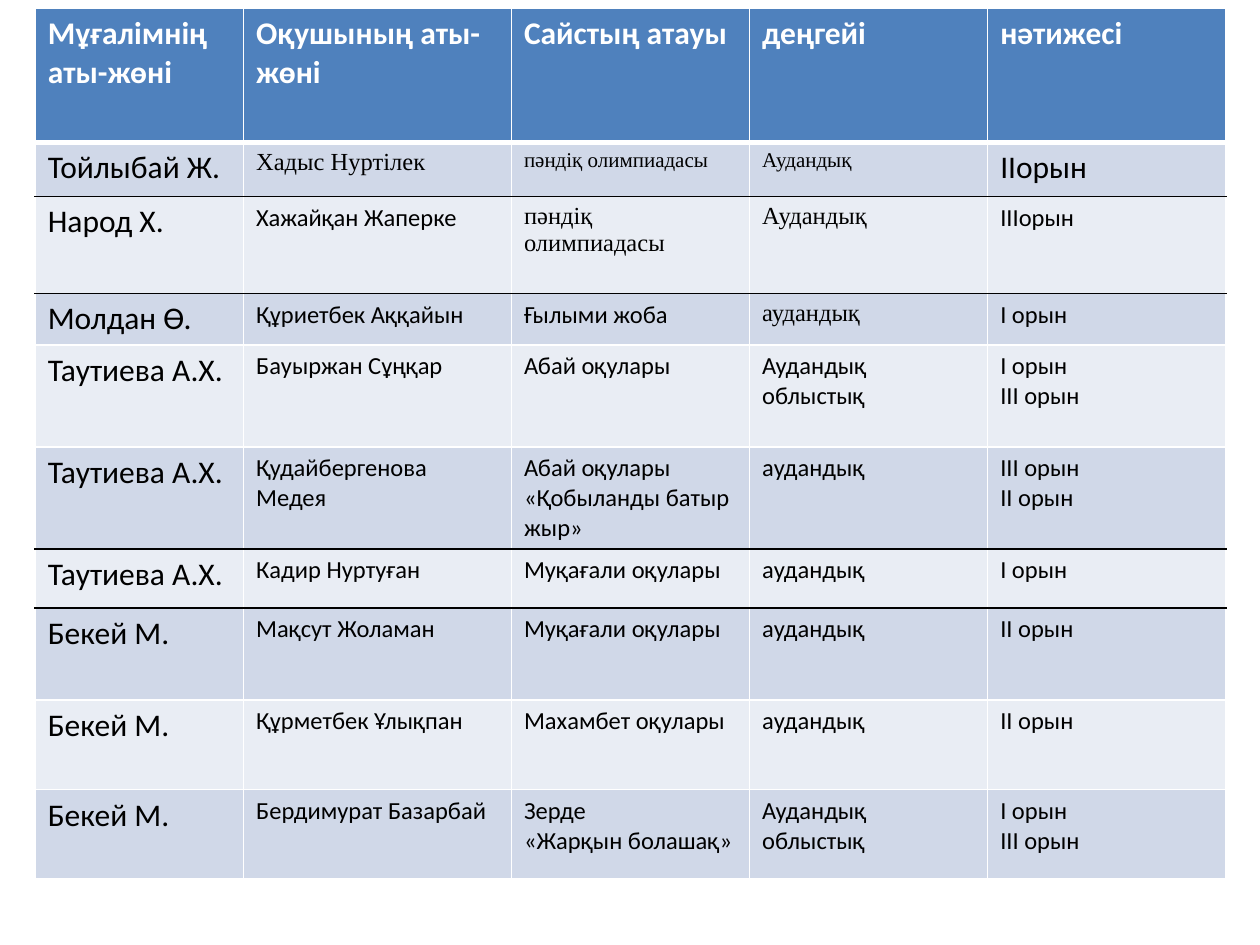
from lxml import etree
from pptx import Presentation
from pptx.dml.color import RGBColor
from pptx.oxml.ns import qn
from pptx.util import Cm, Pt

COLORS = {
    "header": "4F81BD",
    "odd": "D0D8E8",
    "even": "E9EDF4",
    "white": "FFFFFF",
    "black": "000000",
}
SANS, SERIF = "Calibri", "Times New Roman"
BLANK_LAYOUT = 6

COLUMN_WIDTHS = [4.2, 5.4, 4.8, 4.8, 4.8]
ROW_HEIGHTS = [2.7, 1.09, 1.96, 1.03, 2.06, 2.06, 1.19, 1.85, 1.81, 1.79]
ROWS = [
    ["Мұғалімнің аты-жөні", "Оқушының аты-жөні", "Сайстың атауы", "деңгейі", "нәтижесі"],
    ["Тойлыбай Ж.", "Хадыс Нуртілек", "пәндіқ олимпиадасы", "Аудандық", "ІІорын"],
    ["Народ Х.", "Хажайқан Жаперке", "пәндіқ олимпиадасы", "Аудандық", "ІІІорын"],
    ["Молдан Ө.", "Құриетбек Аққайын", "Ғылыми жоба", "аудандық", "І орын"],
    ["Таутиева А.Х.", "Бауыржан Сұңқар", "Абай оқулары", "Аудандық\nоблыстық", "І орын\nІІІ орын"],
    ["Таутиева А.Х.", "Қудайбергенова Медея", "Абай оқулары\n«Қобыланды батыр жыр»", "аудандық",
     "ІІІ орын\nІІ орын"],
    ["Таутиева А.Х.", "Кадир Нуртуған", "Муқағали оқулары", "аудандық", "І орын"],
    ["Бекей М.", "Мақсут Жоламан", "Муқағали оқулары", "аудандық", "ІІ орын"],
    ["Бекей М.", "Құрметбек Ұлықпан", "Махамбет оқулары", "аудандық", "ІІ орын"],
    ["Бекей М.", "Бердимурат Базарбай", "Зерде\n«Жарқын болашақ»", "Аудандық\nоблыстық",
     "І орын\nІІІ орын"],
]
SPECIAL_FONTS = {
    (1, 1): (SERIF, 14),
    (1, 2): (SERIF, 12),
    (1, 3): (SERIF, 12),
    (1, 4): (SANS, 18),
    (2, 2): (SERIF, 14),
    (2, 3): (SERIF, 14),
    (3, 3): (SERIF, 14),
}
BLACK_LINE_BELOW = {1, 2, 5, 6}


class ResultsSlide:
    def __init__(self, presentation):
        self.slide = presentation.slides.add_slide(presentation.slide_layouts[BLANK_LAYOUT])

    def add_table(self, left, top, rows, column_widths, row_heights):
        frame = self.slide.shapes.add_table(
            len(rows), len(column_widths), Cm(left), Cm(top),
            Cm(sum(column_widths)), Cm(sum(row_heights)))
        table = frame.table
        for column, width in zip(table.columns, column_widths):
            column.width = Cm(width)
        for row, height in zip(table.rows, row_heights):
            row.height = Cm(height)
        for row_index, texts in enumerate(rows):
            for column_index, text in enumerate(texts):
                cell = table.cell(row_index, column_index)
                self.write_cell(cell, text, row_index, column_index)
                self.draw_borders(cell, row_index)
                self.fill_cell(cell, row_index)

    def write_cell(self, cell, text, row_index, column_index):
        is_header = row_index == 0
        default = (SANS, 18 if is_header or column_index == 0 else 14)
        name, size = SPECIAL_FONTS.get((row_index, column_index), default)
        cell.text = text
        for paragraph in cell.text_frame.paragraphs:
            font = paragraph.font
            font.name = name
            font.size = Pt(size)
            font.bold = is_header
            font.color.rgb = RGBColor.from_string(COLORS["white" if is_header else "black"])

    def fill_cell(self, cell, row_index):
        role = "header" if row_index == 0 else "odd" if row_index % 2 else "even"
        cell.fill.solid()
        cell.fill.fore_color.rgb = RGBColor.from_string(COLORS[role])

    def draw_borders(self, cell, row_index):
        top = "black" if row_index - 1 in BLACK_LINE_BELOW else "white"
        bottom = "black" if row_index in BLACK_LINE_BELOW else "white"
        borders = [
            ("a:lnL", "white", 1),
            ("a:lnR", "white", 1),
            ("a:lnT", top, 3 if row_index == 1 else 1),
            ("a:lnB", bottom, 3 if row_index == 0 else 1),
        ]
        properties = cell._tc.get_or_add_tcPr()
        for tag, color, width in borders:
            line = etree.SubElement(properties, qn(tag), w=str(Pt(width)))
            fill = etree.SubElement(line, qn("a:solidFill"))
            etree.SubElement(fill, qn("a:srgbClr"), val=COLORS[color])


def main():
    presentation = Presentation()
    presentation.slide_width = Cm(25.4)
    presentation.slide_height = Cm(19.05)
    results = ResultsSlide(presentation)
    results.add_table(0.71, 0.17, ROWS, COLUMN_WIDTHS, ROW_HEIGHTS)
    presentation.save("out.pptx")


if __name__ == "__main__":
    main()
